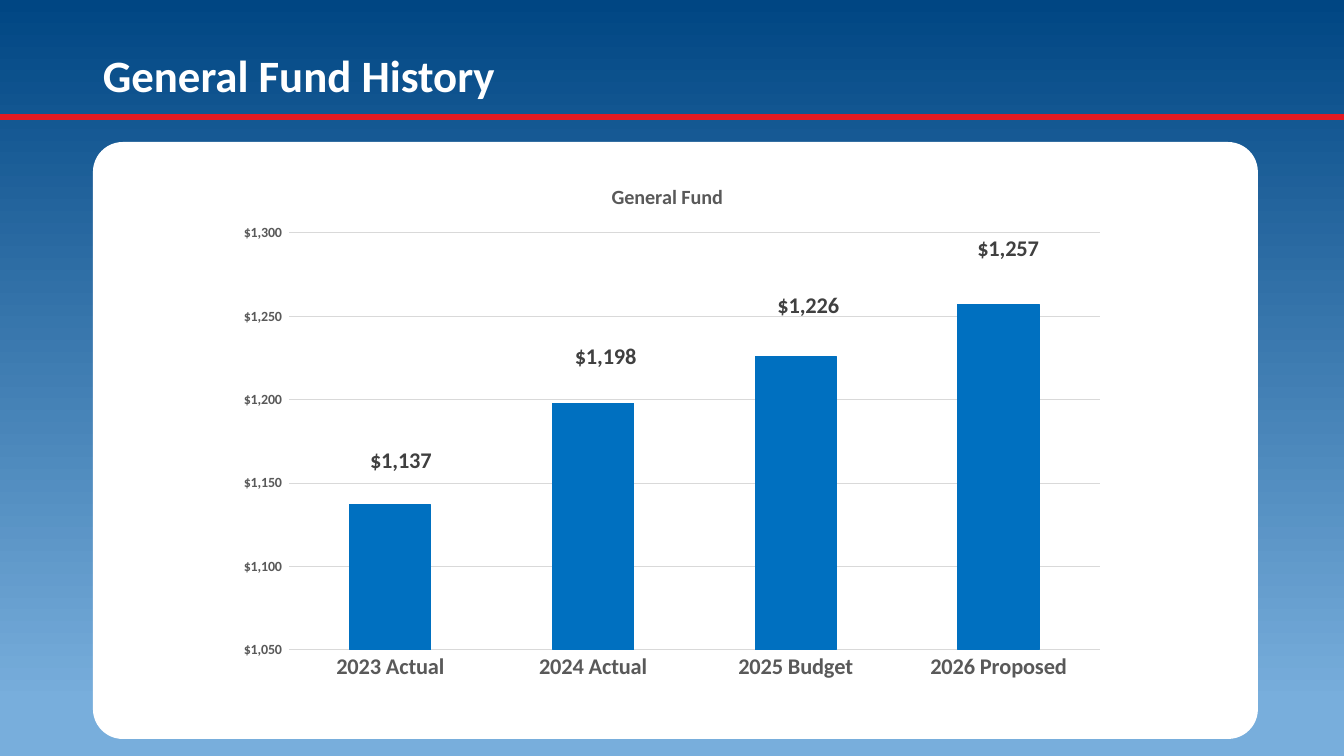
from lxml import etree
from pptx import Presentation
from pptx.chart.data import CategoryChartData
from pptx.dml.color import RGBColor
from pptx.enum.chart import XL_CHART_TYPE, XL_LABEL_POSITION, XL_TICK_MARK
from pptx.enum.shapes import MSO_CONNECTOR, MSO_SHAPE
from pptx.enum.text import MSO_ANCHOR
from pptx.oxml.ns import qn
from pptx.util import Emu, Pt

STACKED = XL_CHART_TYPE.COLUMN_STACKED
CENTER = XL_LABEL_POSITION.CENTER
NO_TICK = XL_TICK_MARK.NONE
STRAIGHT = MSO_CONNECTOR.STRAIGHT
ROUNDED = MSO_SHAPE.ROUNDED_RECTANGLE
MIDDLE = MSO_ANCHOR.MIDDLE

FONT = "Calibri"
DOLLARS = '"$"#,##0_);[Red]\\("$"#,##0\\)'
WHITE, RED, BLUE, GRID = "FFFFFF", "E31B23", "0070C0", "D9D9D9"
GREY, LABEL_GREY = "595959", "404040"
SKY, NAVY = "78AEDC", "004683"
C15 = "http://schemas.microsoft.com/office/drawing/2012/chart"
LABEL_EXT = "{CE6537A1-D6FC-4f65-9D91-7224C49458BB}"

YEARS = ["2023 Actual", "2024 Actual", "2025 Budget", "2026 Proposed"]
AMOUNTS = [1137, 1198, 1226, 1257]
# Shift of each value label from the middle of its bar, in px
LABEL_SHIFTS = [(13, -116), (15, -169), (15, -197), (12, -228)]


def px(n):
    return Emu(round(n * 914400 / 100.8))


def rgb(value):
    return RGBColor.from_string(value)


def style_font(font, size, color, bold=True):
    font.name, font.size, font.bold = FONT, Pt(size), bold
    font.color.rgb = rgb(color)


def write(tf, text, **style):
    p = tf.paragraphs[0]
    r = p.add_run()
    r.text = text
    style_font(r.font, **style)
    return p


def place(parent, index, **values):
    """Give a chart part a manual layout at the given child index."""
    for old in parent.findall(qn("c:layout")):
        parent.remove(old)
    layout = etree.Element(qn("c:layout"))
    manual = etree.SubElement(layout, qn("c:manualLayout"))
    for tag, value in values.items():
        text = value if isinstance(value, str) else f"{value:.4f}"
        etree.SubElement(manual, qn(f"c:{tag}")).set("val", text)
    parent.insert(index, layout)


def hide_leader_lines(labels):
    """Keep moved labels from being tied to their bars."""
    for node in labels.findall(qn("c:showLeaderLines")):
        node.set("val", "0")
    ext_list = etree.SubElement(labels, qn("c:extLst"))
    ext = etree.SubElement(ext_list, qn("c:ext"), nsmap={"c15": C15}, uri=LABEL_EXT)
    etree.SubElement(ext, f"{{{C15}}}showLeaderLines", val="0")


class Deck:
    def __init__(self):
        self.prs = Presentation()
        self.prs.slide_width, self.prs.slide_height = px(1344), px(756)
        self.s = self.prs.slides.add_slide(self.prs.slide_layouts[6])

    def background(self, *stops):
        fill = self.s.background.fill
        fill.gradient()
        fill.gradient_angle = 90
        for stop, (position, color) in zip(fill.gradient_stops, stops):
            stop.position = position
            stop.color.rgb = rgb(color)

    def rule(self, x1, y1, x2, y2, color, width):
        line = self.s.shapes.add_connector(STRAIGHT, px(x1), px(y1), px(x2), px(y2))
        line.line.color.rgb = rgb(color)
        line.line.width = Pt(width)
        etree.SubElement(line._element.spPr, qn("a:effectLst"))

    def text(self, x, y, w, h, text, **style):
        tf = self.s.shapes.add_textbox(px(x), px(y), px(w), px(h)).text_frame
        tf.word_wrap = True
        tf.vertical_anchor = MIDDLE
        write(tf, text, **style).line_spacing = 0.9

    def panel(self, x, y, w, h, fill, radius):
        sp = self.s.shapes.add_shape(ROUNDED, px(x), px(y), px(w), px(h))
        sp.adjustments[0] = radius
        sp.shadow.inherit = False
        sp.fill.solid()
        sp.fill.fore_color.rgb = rgb(fill)
        sp.line.fill.background()

    def column_chart(self, x, y, w, h, title, title_at, plot_box):
        data = CategoryChartData(number_format=DOLLARS)
        data.categories = YEARS
        data.add_series("Series 1", AMOUNTS)
        chart = self.s.shapes.add_chart(STACKED, px(x), px(y), px(w), px(h), data).chart
        style_font(chart.font, 10, "000000", bold=False)
        chart.has_legend = False

        # Chart title
        chart.has_title = True
        write(chart.chart_title.text_frame, title, size=14.4, color=GREY)
        place(chart.chart_title.element, 1, xMode="edge", yMode="edge",
              x=(title_at[0] - x) / w, y=(title_at[1] - y) / h)

        # Axes
        for axis, size in ((chart.category_axis, 16), (chart.value_axis, 10)):
            axis.major_tick_mark = axis.minor_tick_mark = NO_TICK
            axis.format.line.fill.background()
            style_font(axis.tick_labels.font, size, GREY)
        values = chart.value_axis
        values.minimum_scale, values.maximum_scale, values.major_unit = 1050, 1300, 50
        values.tick_labels.number_format = DOLLARS
        values.tick_labels.number_format_is_linked = False
        values.major_gridlines.format.line.color.rgb = rgb(GRID)
        values.major_gridlines.format.line.width = Pt(0.75)

        # Bars
        plot = chart.plots[0]
        plot.gap_width, plot.overlap = 150, 100
        plot.vary_by_categories = False
        series = plot.series[0]
        series.format.fill.solid()
        series.format.fill.fore_color.rgb = rgb(BLUE)
        series.format.line.color.rgb = rgb(BLUE)
        series.format.line.width = Pt(0.75)

        # Value labels
        labels = series.data_labels
        labels.show_value = True
        labels.number_format = DOLLARS
        labels.number_format_is_linked = False
        style_font(labels.font, 16, LABEL_GREY)
        for i in range(len(AMOUNTS)):
            label = series.points[i].data_label
            style_font(label.font, 16, LABEL_GREY)
            label.position = CENTER
        for node, (dx, dy) in zip(chart.element.xpath(".//c:dLbl"), LABEL_SHIFTS):
            place(node, 1, x=dx / w, y=dy / h)
            fmt = etree.Element(qn("c:numFmt"), formatCode=DOLLARS, sourceLinked="0")
            node.insert(2, fmt)
        hide_leader_lines(chart.element.xpath(".//c:ser/c:dLbls")[0])

        # Plot area
        left, top, width, height = plot_box
        place(chart.element.xpath(".//c:plotArea")[0], 0, layoutTarget="inner",
              xMode="edge", yMode="edge", x=(left - x) / w, y=(top - y) / h,
              w=width / w, h=height / h)


def main():
    deck = Deck()
    # Backdrop and heading
    deck.background((0.07, SKY), (1, NAVY))
    deck.rule(0, 117, 1344, 117, RED, 4.5)
    deck.text(93, 40, 1159, 77, "General Fund History", size=32, color=WHITE)
    # Chart on its panel
    deck.panel(93, 142, 1165, 597, WHITE, 0.05)
    deck.column_chart(226, 162, 892, 529, "General Fund", title_at=(608, 180),
                      plot_box=(289, 233, 811, 417))
    deck.prs.save("out.pptx")


if __name__ == "__main__":
    main()
